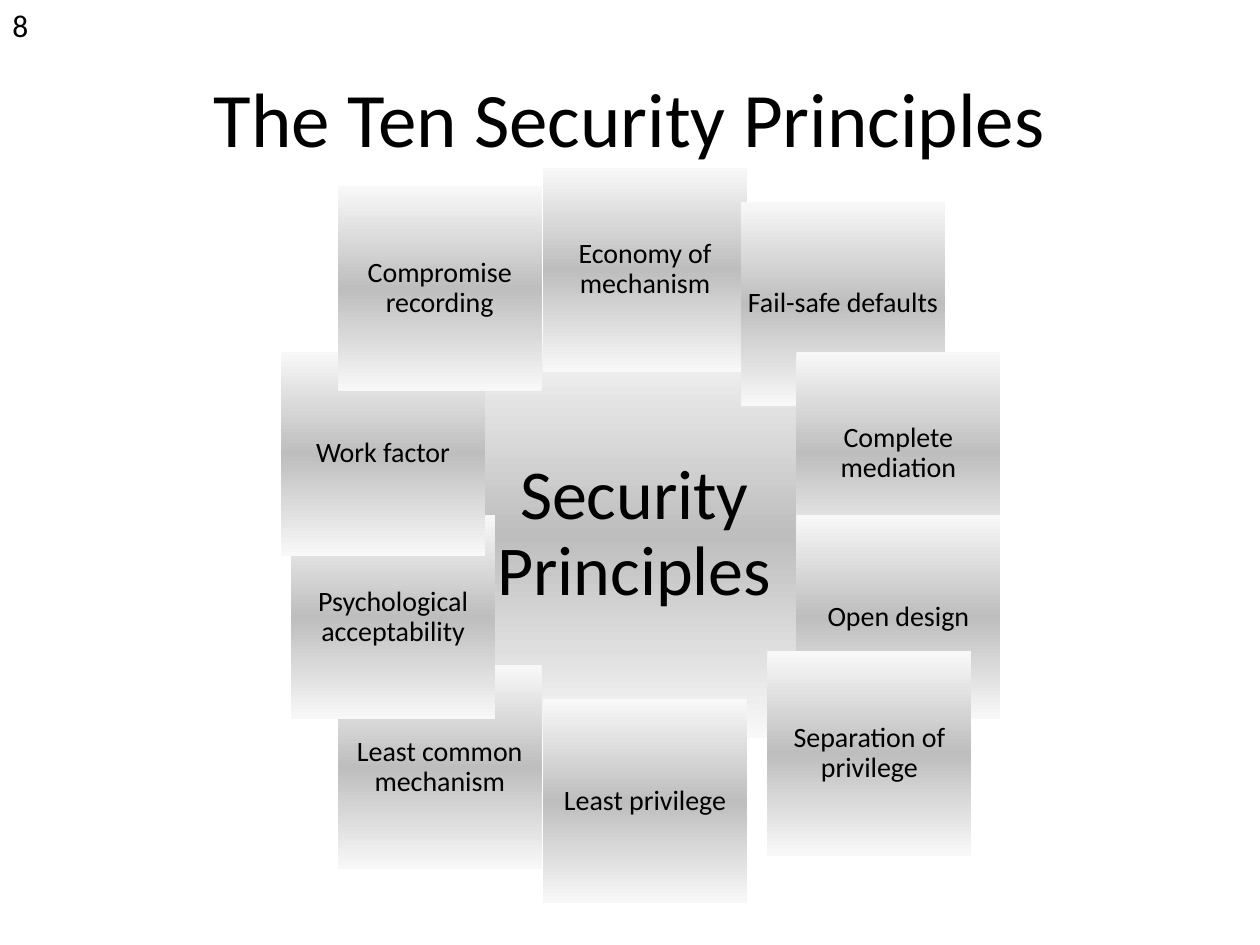
from copy import deepcopy
from pptx import Presentation
from pptx.dml.color import RGBColor
from pptx.enum import shapes, text
from pptx.oxml.ns import qn
from pptx.util import Inches, Pt


def paint(color, code):
    color.rgb = RGBColor.from_string(code)


def write(shape, words, size, pads, align="CENTER", anchor="MIDDLE", space=None):
    frame = shape.text_frame
    form = {
        "word_wrap": True,
        "vertical_anchor": getattr(text.MSO_ANCHOR, anchor),
        "margin_left": Inches(pads[0]),
        "margin_right": Inches(pads[0]),
        "margin_top": Inches(pads[1]),
        "margin_bottom": Inches(pads[1]),
    }
    for key, value in form.items():
        setattr(frame, key, value)
    para = frame.paragraphs[0]
    para.alignment = getattr(text.PP_ALIGN, align)
    para.line_spacing = space
    run = para.add_run()
    run.text = words
    for key, value in {"name": "Calibri", "size": Pt(size)}.items():
        setattr(run.font, key, value)
    paint(run.font.color, "000000")


deck = Presentation()
deck.slide_width, deck.slide_height = Inches(10), Inches(7.5)
slide = deck.slides.add_slide(deck.slide_layouts[6])

small = (1.62, 16, 0.02)
tiles = [
    ("Security Principles", 3.42, 2.63, (3.23, 40, 0.06)),
    ("Economy of mechanism", 4.31, 1.33, small),
    ("Fail-safe defaults", 5.88, 1.6, small),
    ("Complete mediation", 6.32, 2.79, small),
    ("Open design", 6.32, 4.09, small),
    ("Separation of privilege", 6.09, 5.17, small),
    ("Least privilege", 4.31, 5.55, small),
    ("Least common mechanism", 2.68, 5.28, small),
    ("Psychological acceptability", 2.31, 4.09, small),
    ("Work factor", 2.23, 2.79, small),
    ("Compromise recording", 2.68, 1.48, small),
]
for words, left, top, (side, size, pad) in tiles:
    tile = slide.shapes.add_shape(
        shapes.MSO_SHAPE.RECTANGLE, Inches(left), Inches(top), Inches(side), Inches(side)
    )
    tile.shadow.inherit = False
    tile.line.fill.background()
    tile.fill.gradient()
    tile.fill.gradient_angle = 270
    stops = next(tile.element.iter(qn("a:gsLst")))
    stops.insert(1, deepcopy(stops[0]))
    shades = [(0, "F8F8F8"), (0.5, "BEBEBE"), (1, "F8F8F8")]
    for stop, (place, shade) in zip(tile.fill.gradient_stops, shades):
        stop.position = place
        paint(stop.color, shade)
    write(tile, words, size, (pad, pad), space=0.9)

title = slide.shapes.add_textbox(Inches(0.5), Inches(0.3), Inches(9), Inches(1.25))
write(title, "The Ten Security Principles", 44, (0.1, 0.05))

number = slide.shapes.add_textbox(0, 0, Inches(12.9), Inches(12.9))
write(number, "8", 18, (0.1, 0.05), "LEFT", "TOP")

deck.save("out.pptx")
